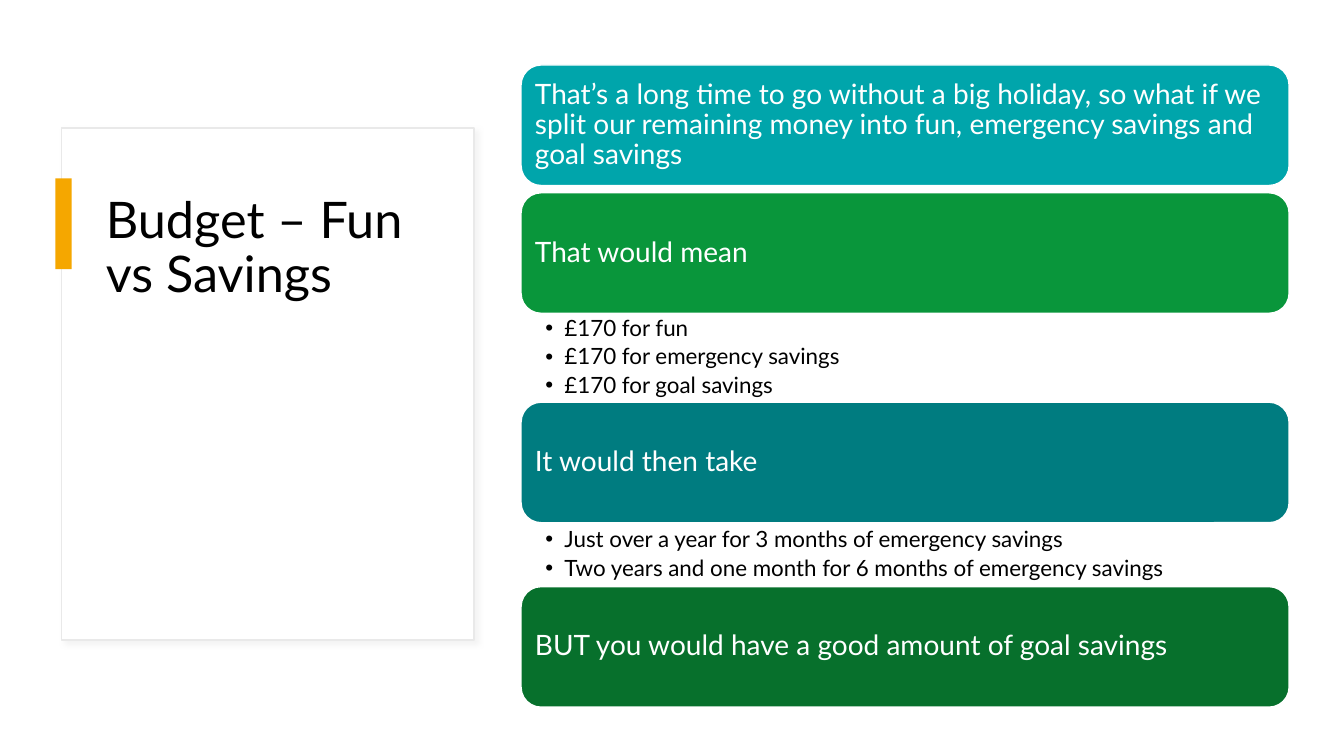
from lxml import etree
from pptx import Presentation
from pptx import util as u
from pptx.dml.color import RGBColor
from pptx.enum import shapes, text
from pptx.oxml.ns import qn

WHITE = RGBColor(0xFF, 0xFF, 0xFF)
BLACK = RGBColor(0x00, 0x00, 0x00)
BORDER = RGBColor(0xE9, 0xE9, 0xE9)
SHADOW = RGBColor(0xD9, 0xD9, 0xD9)
AMBER = RGBColor(0xF5, 0xA7, 0x00)
TURQUOISE = RGBColor(0x00, 0xA5, 0xAB)
GREEN = RGBColor(0x09, 0x96, 0x3B)
TEAL = RGBColor(0x00, 0x7C, 0x80)
FOREST = RGBColor(0x07, 0x70, 0x2C)

LEFT, WIDTH = 38.77, 57.15
TOP, BOX_HEIGHT = 8.6, 15.95

STEPS = [
    ("That’s a long time to go without a big holiday, so what if we split our "
     "remaining money into fun, emergency savings and goal savings",
     TURQUOISE, [], 0.95),
    ("That would mean", GREEN,
     ["£170 for fun", "£170 for emergency savings", "£170 for goal savings"], 11.75),
    ("It would then take", TEAL,
     ["Just over a year for 3 months of emergency savings",
      "Two years and one month for 6 months of emergency savings"], 8.45),
    ("BUT you would have a good amount of goal savings", FOREST, [], 0),
]


class Deck:
    font = "Lato"
    spacing = 0.9

    def __init__(self):
        self.prs = Presentation()
        self.prs.slide_width = u.Inches(13.33)
        self.prs.slide_height = u.Inches(7.5)
        self.s = self.prs.slides.add_slide(self.prs.slide_layouts[3])

    def area(self, x, y, w, h):
        col, row = self.prs.slide_width / 100, self.prs.slide_height / 100
        return [round(v) for v in (x * col, y * row, w * col, h * row)]

    def shape(self, kind, share, fill, line=None):
        sp = self.s.shapes.add_shape(kind, *self.area(*share))
        sp.shadow.inherit = False
        sp.fill.solid()
        sp.fill.fore_color.rgb = fill
        if line is None:
            sp.line.fill.background()
        else:
            sp.line.color.rgb = line
            sp.line.width = u.Pt(1)
        return sp

    def cast_shadow(self, sp):
        effects = sp._element.spPr.find(qn("a:effectLst"))
        shadow = etree.SubElement(
            effects, qn("a:outerShdw"), blurRad=str(u.Pt(4)), dist=str(u.Pt(3)),
            dir="2700000", algn="tl", rotWithShape="0")
        color = etree.SubElement(shadow, qn("a:srgbClr"), val=str(SHADOW))
        etree.SubElement(color, qn("a:alpha"), val="30000")

    def fill_text(self, sp, lines, size, color, anchor, insets, after=0):
        tf = sp.text_frame
        tf.word_wrap = True
        tf.auto_size = text.MSO_AUTO_SIZE.NONE
        tf.vertical_anchor = anchor
        tf.margin_left, tf.margin_top, tf.margin_right, tf.margin_bottom = map(u.Inches, insets)
        for i, line in enumerate(lines):
            p = tf.add_paragraph() if i else tf.paragraphs[0]
            p.alignment = text.PP_ALIGN.LEFT
            p.line_spacing = self.spacing
            p.space_before = u.Pt(0)
            p.space_after = u.Pt(after)
            r = p.add_run()
            r.text = line
            r.font.name = self.font
            r.font.size = u.Pt(size)
            r.font.color.rgb = color
        return tf

    def place(self, ph, share):
        ph.left, ph.top, ph.width, ph.height = self.area(*share)
        self.s.shapes._spTree.append(ph._element)

    def card(self, share):
        sp = self.shape(shapes.MSO_SHAPE.RECTANGLE, share, WHITE, BORDER)
        self.cast_shadow(sp)

    def accent(self, share):
        self.shape(shapes.MSO_SHAPE.RECTANGLE, share, AMBER)

    def title(self, share, wording):
        ph = self.s.shapes.title
        self.place(ph, share)
        self.fill_text(ph, [wording], 36, BLACK, text.MSO_ANCHOR.TOP, (0.1, 0.05, 0.1, 0.05))

    def box(self, share, wording, fill):
        sp = self.shape(shapes.MSO_SHAPE.ROUNDED_RECTANGLE, share, fill, WHITE)
        self.fill_text(sp, [wording], 20, WHITE, text.MSO_ANCHOR.MIDDLE, (0.08,) * 4)

    def bullets(self, ph, share, items):
        self.place(ph, share)
        tf = self.fill_text(ph, items, 16, BLACK, text.MSO_ANCHOR.MIDDLE, (0.24, 0, 0.16, 0), 3.2)
        for p in tf.paragraphs:
            pPr = p._p.get_or_add_pPr()
            pPr.set("marL", str(u.Inches(0.19)))
            pPr.set("indent", str(u.Inches(-0.19)))


def main():
    deck = Deck()
    bodies = iter([ph for ph in deck.s.placeholders if ph.placeholder_format.idx in (1, 2)])
    deck.card((4.6, 16.93, 30.68, 67.73))
    deck.title((7.13, 25.07, 25.43, 51.33), "Budget – Fun vs Savings")
    deck.accent((4.13, 23.6, 1.2, 12))

    y = TOP
    for wording, fill, items, space in STEPS:
        deck.box((LEFT, y, WIDTH, BOX_HEIGHT), wording, fill)
        y += BOX_HEIGHT
        if items:
            deck.bullets(next(bodies), (LEFT, y, WIDTH, space), items)
        y += space

    deck.prs.save("out.pptx")


if __name__ == "__main__":
    main()
